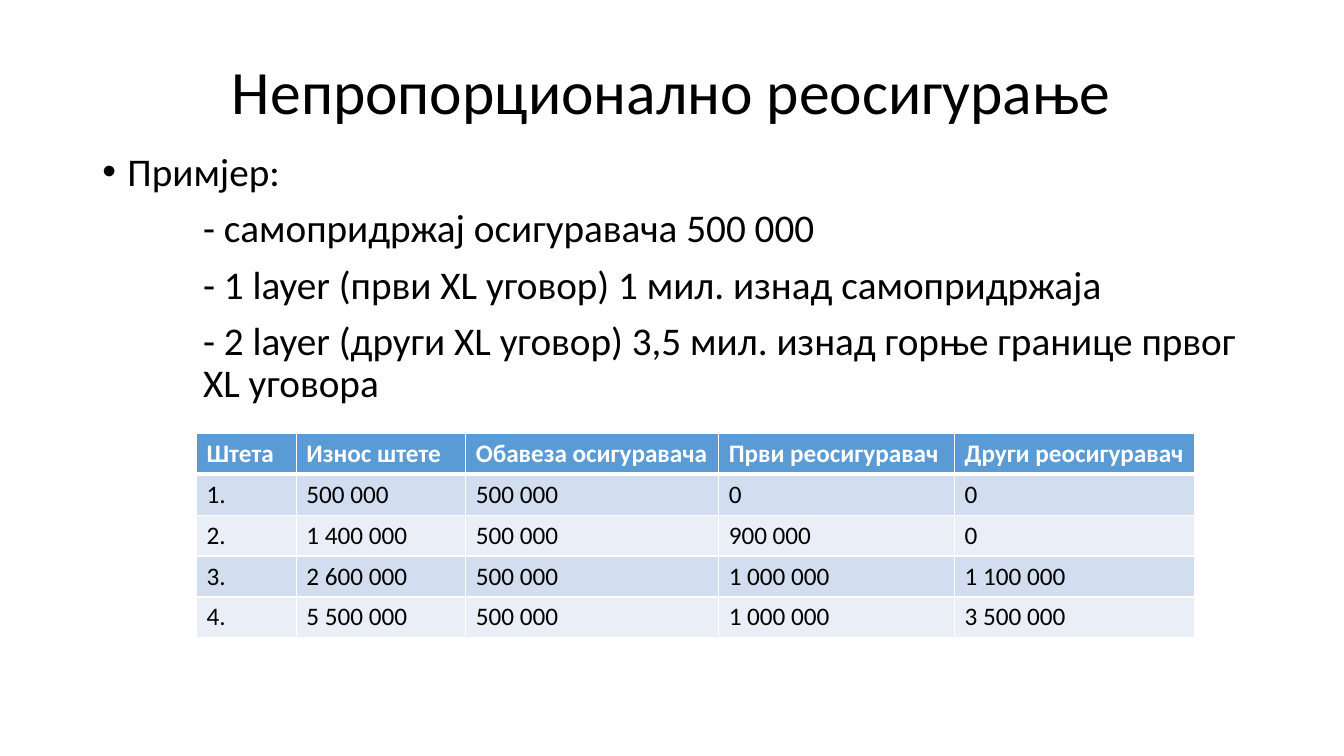
"""Build the slide on non-proportional reinsurance with its example table."""
from lxml.etree import SubElement as Sub
from pptx import Presentation
from pptx.dml.color import RGBColor as RGB
from pptx.enum.text import MSO_ANCHOR as Anchor, PP_ALIGN as Align
from pptx.oxml.ns import qn
from pptx.util import Pt

COLORS = {"text": "000000", "white": "FFFFFF", "head": "5B9BD5",
          "odd": "D2DEEF", "even": "EAEFF7"}
POINTS = [
    "Примјер:",
    "- самопридржај осигуравача 500 000",
    "- 1 layer (први XL уговор) 1 мил. изнад самопридржаја",
    "- 2 layer (други XL уговор) 3,5 мил. изнад горње границе првог XL уговора",
]
ROWS = [
    ["Штета", "Износ штете", "Обавеза осигуравача", "Први реосигуравач", "Други реосигуравач"],
    ["1.", "500 000", "500 000", "0", "0"],
    ["2.", "1 400 000", "500 000", "900 000", "0"],
    ["3.", "2 600 000", "500 000", "1 000 000", "1 100 000"],
    ["4.", "5 500 000", "500 000", "1 000 000", "3 500 000"],
]
WIDTHS = [71.3, 121, 180.7, 168.5, 171.3]
HIGH = 29.2


def style(para, size, color="text", bold=False):
    font = para.font
    font.name, font.size, font.bold = "Calibri", Pt(size), bold
    font.color.rgb = RGB.from_string(COLORS[color])


def edge(cell, side, width):
    line = Sub(cell._tc.get_or_add_tcPr(), qn(f"a:ln{side}"), w=str(Pt(width)))
    Sub(Sub(line, qn("a:solidFill")), qn("a:srgbClr"), val=COLORS["white"])


deck = Presentation()
deck.slide_width, deck.slide_height = Pt(960), Pt(540)
slide = deck.slides.add_slide(deck.slide_layouts[6])
shapes = slide.shapes

title = shapes.add_textbox(Pt(66), Pt(28.8), Pt(828), Pt(76.8)).text_frame
title.word_wrap = True
title.vertical_anchor = Anchor.MIDDLE
para = title.paragraphs[0]
para.text = "Непропорционално реосигурање"
para.alignment, para.line_spacing = Align.CENTER, 0.9
style(para, 44)

body = shapes.add_textbox(Pt(66), Pt(105.4), Pt(828), Pt(408)).text_frame
body.word_wrap = True
for i, text in enumerate(POINTS):
    para = body.paragraphs[0] if i == 0 else body.add_paragraph()
    para.text = text
    para.line_spacing = 0.9
    para.space_before = Pt(10 if i else 0)
    props = para._p.get_or_add_pPr()
    props.set("marL", str(Pt(72 if i else 18)))
    props.set("indent", str(Pt(0 if i else -18)))
    if i == 0:
        Sub(props, qn("a:buFont"), typeface="Arial")
        Sub(props, qn("a:buChar"), char="•")
    style(para, 28)

table = shapes.add_table(len(ROWS), len(WIDTHS), Pt(140.4), Pt(309.6),
                         Pt(sum(WIDTHS)), Pt(HIGH * len(ROWS))).table
for col, width in zip(table.columns, WIDTHS):
    col.width = Pt(width)
for r, row in enumerate(ROWS):
    table.rows[r].height = Pt(HIGH)
    shade = "head" if r == 0 else "odd" if r % 2 else "even"
    for c, text in enumerate(row):
        cell = table.cell(r, c)
        for side in "LRTB":
            thick = (r, side) in [(0, "B"), (1, "T")]
            edge(cell, side, 3 if thick else 1)
        cell.fill.solid()
        cell.fill.fore_color.rgb = RGB.from_string(COLORS[shade])
        cell.text = text
        style(cell.text_frame.paragraphs[0], 18, "text" if r else "white", r == 0)

deck.save("out.pptx")
